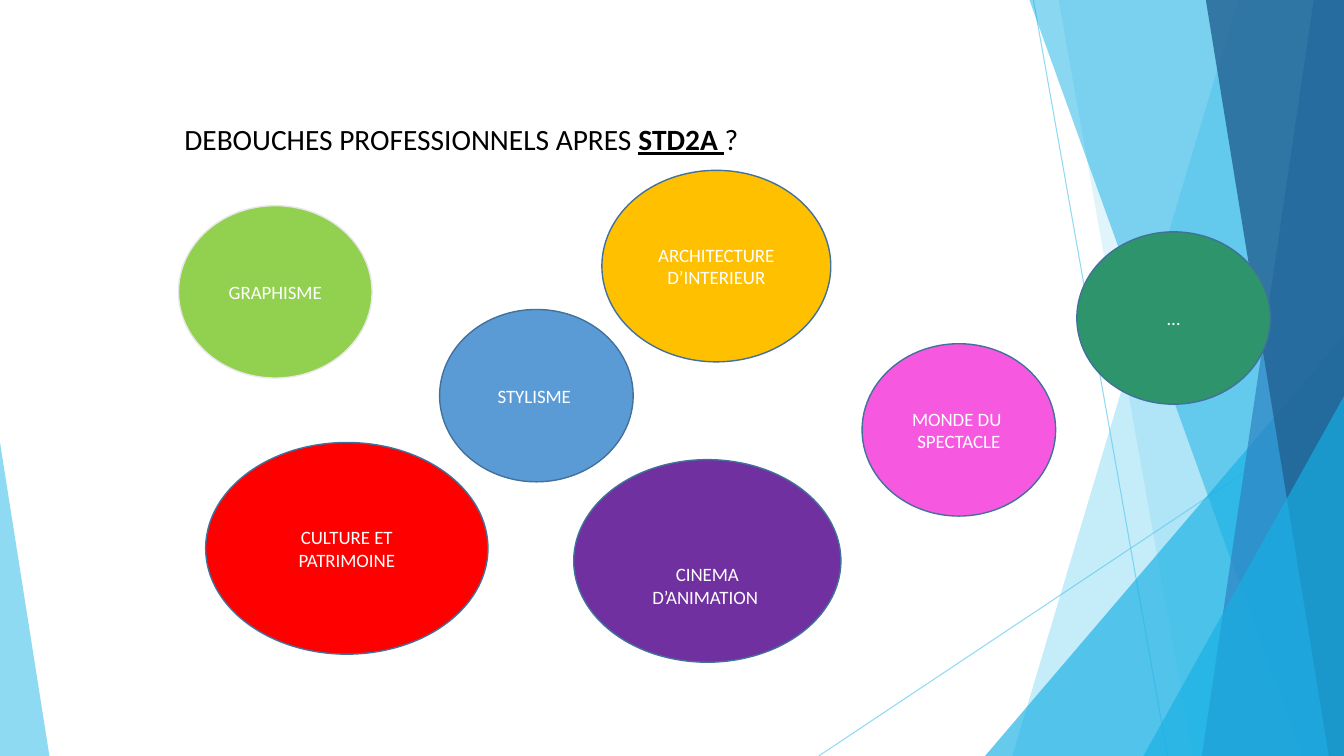
import lxml.etree
import pptx
import pptx.dml.color
import pptx.enum.shapes
import pptx.enum.text
import pptx.oxml.ns
import pptx.util

Inches = pptx.util.Inches
Pt = pptx.util.Pt
qn = pptx.oxml.ns.qn
SHAPE = pptx.enum.shapes.MSO_SHAPE
ALIGN = pptx.enum.text.PP_ALIGN
ANCHOR = pptx.enum.text.MSO_ANCHOR
WIDTH, HEIGHT = 13.33, 7.5


def rgb(color):
    """Turn a hex string into a colour."""
    return pptx.dml.color.RGBColor.from_string(color)


def set_opacity(sp, percent):
    """Make every colour of a shape or line partly transparent."""
    for clr in sp._element.spPr.iter(qn("a:srgbClr")):
        lxml.etree.SubElement(clr, qn("a:alpha"), val=str(percent * 1000))


def style_facet(sp, color, opacity):
    """Give a facet a transparent fill and no outline."""
    sp.shadow.inherit = False
    sp.fill.solid()
    sp.fill.fore_color.rgb = rgb(color)
    sp.line.fill.background()
    set_opacity(sp, opacity)


def add_ray(slide, x1, y1, x2, y2):
    """Draw a thin translucent line."""
    line = slide.shapes.add_connector(
        pptx.enum.shapes.MSO_CONNECTOR.STRAIGHT,
        Inches(x1), Inches(y1), Inches(x2), Inches(y2))
    line.line.color.rgb = rgb("5FCBEF")
    line.line.width = Pt(0.75)
    lxml.etree.SubElement(line._element.spPr, qn("a:effectLst"))
    set_opacity(line, 70)


def add_band(slide, top_x, bottom_x, right, height, color, opacity):
    """Draw a band from a slanted left edge to the right edge."""
    builder = slide.shapes.build_freeform(Inches(top_x), 0)
    builder.add_line_segments([(Inches(x), Inches(y)) for x, y in (
        (right, 0), (right, height), (bottom_x, height))])
    style_facet(builder.convert_to_shape(), color, opacity)


def add_triangle(slide, x, width, height, bottom, apex, color, opacity):
    """Draw a right triangle that stands on the bottom edge."""
    sp = slide.shapes.add_shape(
        SHAPE.ISOSCELES_TRIANGLE, Inches(x), Inches(bottom - height),
        Inches(width), Inches(height))
    sp.adjustments[0] = apex
    style_facet(sp, color, opacity)


def add_facets(slide, x, y, w, h):
    """Draw the faceted background within a box."""
    right, bottom = x + w, y + h
    add_ray(slide, right - 3.08, y, right - 1.75, bottom)
    add_ray(slide, right, y + 4.03, right - 5.21, bottom)
    for top, base, color, opacity in (
            (1.05, 3.29, "5FCBEF", 36), (2.83, 1.5, "5FCBEF", 20)):
        add_band(slide, right - top, right - base, right, bottom, color, opacity)
    add_triangle(slide, right - 3.56, 3.56, 4.17, bottom, 1, "17B0E4", 66)
    for top, base, color, opacity in (
            (3.12, 0.42, "17B0E4", 50), (0.3, 1.41, "2E83C3", 70),
            (1.37, 0.15, "226292", 80)):
        add_band(slide, right - top, right - base, right, bottom, color, opacity)
    add_triangle(slide, right - 1.99, 1.99, 3.57, bottom, 1, "17B0E4", 66)
    add_triangle(slide, x, 0.49, 3.11, bottom, 0, "5FCBEF", 70)


def add_bubble(slide, x, y, w, h, text, fill, line="41719C", top_inset=0.05):
    """Draw one career as a labelled ellipse."""
    sp = slide.shapes.add_shape(
        SHAPE.OVAL, Inches(x), Inches(y), Inches(w), Inches(h))
    sp.shadow.inherit = False
    sp.fill.solid()
    sp.fill.fore_color.rgb = rgb(fill)
    sp.line.color.rgb = rgb(line)
    sp.line.width = Pt(1)
    tf = sp.text_frame
    tf.word_wrap = True
    tf.vertical_anchor = ANCHOR.MIDDLE
    tf.margin_left = tf.margin_right = Inches(0.15)
    tf.margin_top, tf.margin_bottom = Inches(top_inset), Inches(0.05)
    tf.text = text
    for p in tf.paragraphs:
        p.alignment = ALIGN.CENTER
        p.font.name = "Calibri"
        p.font.size = Pt(13.5)
        p.font.color.rgb = rgb("FFFFFF")


def add_title(slide, x, y, w, h):
    """Write the heading with its emphasised course name."""
    tf = slide.shapes.add_textbox(
        Inches(x), Inches(y), Inches(w), Inches(h)).text_frame
    tf.word_wrap = True
    p = tf.paragraphs[0]
    p.font.name = "Calibri"
    p.font.size = Pt(21)
    p.font.color.rgb = rgb("000000")
    for text, strong in (("DEBOUCHES PROFESSIONNELS APRES ", False),
                         ("STD2A ", True), ("?", False)):
        r = p.add_run()
        r.text = text
        if strong:
            r.font.bold = r.font.underline = True


def add_careers(slide, x, y):
    """Place the career bubbles relative to a corner."""
    small = (1.92, 1.71)
    for dx, dy, size, text, fill, options in (
            (0, 0.35, small, "GRAPHISME", "92D050", {"line": "E7E6E6"}),
            (0.27, 2.7, (2.8, 2.1), "CULTURE ET PATRIMOINE", "FF0000", {}),
            (3.92, 2.87, (2.65, 2.01), "CINEMA D’ANIMATION ", "7030A0",
             {"top_inset": 0.53}),
            (4.2, 0, (2.27, 1.9), "ARCHITECTURE D’INTERIEUR", "FFC000", {}),
            (2.59, 1.38, small, "STYLISME ", "5B9BD5", {}),
            (6.78, 1.72, small, "MONDE DU \nSPECTACLE", "F658DF", {})):
        add_bubble(slide, x + dx, y + dy, *size, text, fill, **options)
    add_bubble(slide, x + 8.91, y + 0.61, *small, "…", "2E946B")


def main():
    """Build and save the slide."""
    prs = pptx.Presentation()
    prs.slide_width, prs.slide_height = Inches(WIDTH), Inches(HEIGHT)
    slide = prs.slides.add_slide(prs.slide_layouts[6])
    add_facets(slide, 0, 0, WIDTH, HEIGHT)
    add_title(slide, 1.73, 1.15, 7.91, 0.45)
    add_careers(slide, 1.77, 1.69)
    prs.save("out.pptx")


if __name__ == "__main__":
    main()
